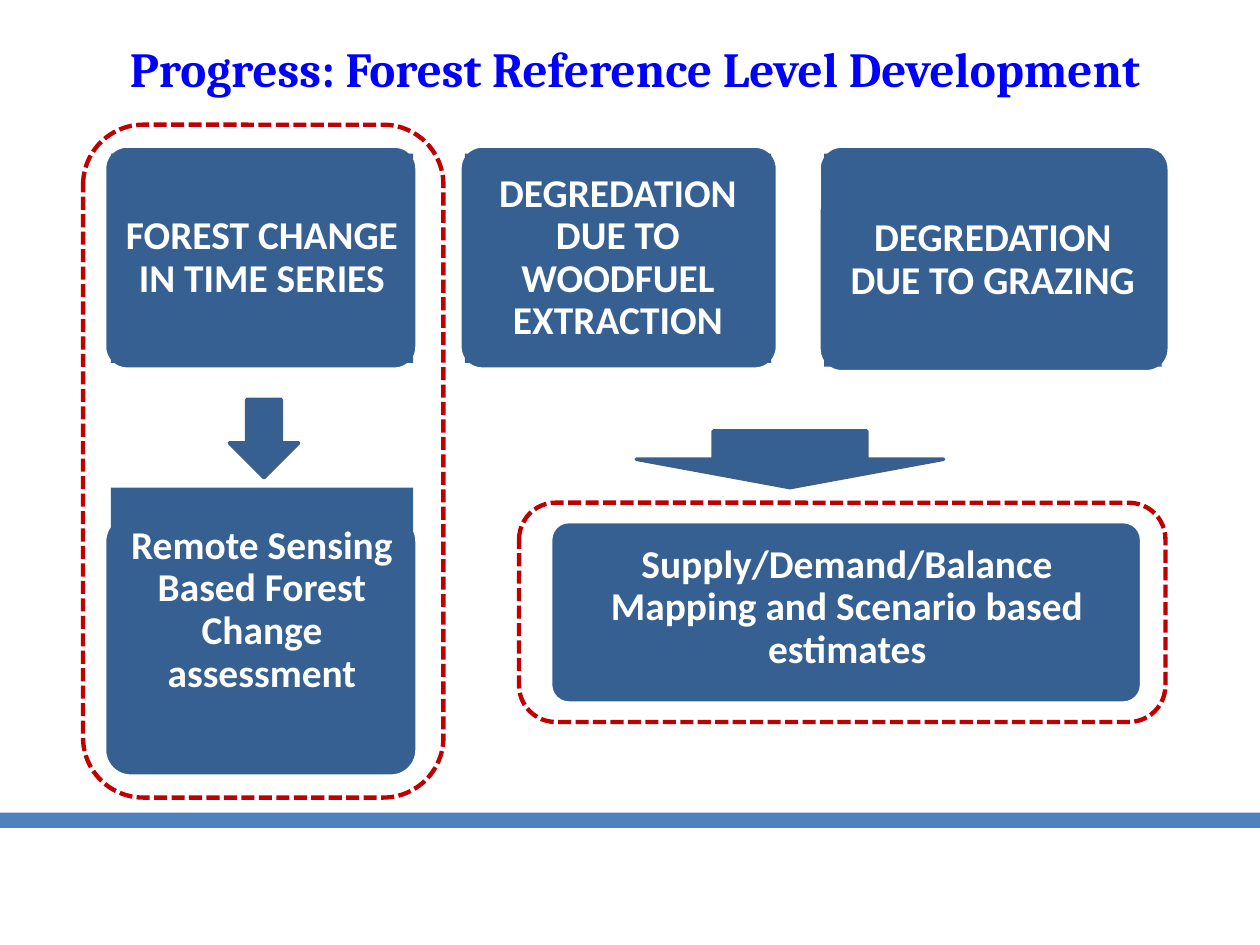
import collections

import pptx
import pptx.dml.color
import pptx.enum.dml
import pptx.enum.shapes
import pptx.enum.text
import pptx.util

Inches = pptx.util.Inches
Pt = pptx.util.Pt
RGBColor = pptx.dml.color.RGBColor
Shapes = pptx.enum.shapes.MSO_SHAPE

NAVY = RGBColor(0x37, 0x60, 0x92)
ARROW_EDGE = RGBColor(0x3A, 0x5F, 0x8C)
BAR_BLUE = RGBColor(0x4F, 0x81, 0xBD)
TITLE_BLUE = RGBColor(0x00, 0x00, 0xFF)
RED = RGBColor(0xC0, 0x00, 0x00)
WHITE = RGBColor(0xFF, 0xFF, 0xFF)

Box = collections.namedtuple("Box", "left top width height")


def inside(box, left, top, width, height):
    return Box(box.left + left, box.top + top, width, height)


def add_shape(parent, kind, box, fill=None, line=None, weight=2):
    shape = parent.add_shape(kind, *(Inches(length) for length in box))
    shape.shadow.inherit = False
    if fill is None:
        shape.fill.background()
    else:
        shape.fill.solid()
        shape.fill.fore_color.rgb = fill
    if line is None:
        shape.line.fill.background()
    else:
        shape.line.color.rgb = line
        shape.line.width = Pt(weight)
    return shape


def format_text(frame, text, font_name, size, color):
    frame.word_wrap = True
    frame.vertical_anchor = pptx.enum.text.MSO_ANCHOR.MIDDLE
    frame.text = text
    para = frame.paragraphs[0]
    para.alignment = pptx.enum.text.PP_ALIGN.CENTER
    for span in para.runs:
        span.font.name = font_name
        span.font.size = Pt(size)
        span.font.bold = True
        span.font.color.rgb = color
    return para


def add_card(page, box, label_box, text):
    card = page.shapes.add_group_shape().shapes
    panel = add_shape(card, Shapes.ROUNDED_RECTANGLE, box, NAVY, WHITE)
    panel.adjustments[0] = 0.1
    label = add_shape(card, Shapes.RECTANGLE, label_box, NAVY)
    frame = label.text_frame
    frame.margin_left = frame.margin_right = Inches(0.09)
    frame.margin_top = frame.margin_bottom = Inches(0.09)
    para = format_text(frame, text, "Calibri", 22.5, WHITE)
    para.line_spacing = 0.9


def add_arrow(page, box):
    add_shape(page.shapes, Shapes.DOWN_ARROW, box, NAVY, ARROW_EDGE)


def add_dashed_outline(page, box):
    outline = add_shape(page.shapes, Shapes.ROUNDED_RECTANGLE, box, line=RED, weight=2.5)
    outline.line.dash_style = pptx.enum.dml.MSO_LINE.SQUARE_DOT


def add_title(page, box):
    title = page.shapes.title
    title.left, title.top, title.width, title.height = (Inches(length) for length in box)
    format_text(title.text_frame, "Progress: Forest Reference Level Development",
                "Cambria", 28, TITLE_BLUE)


def add_forest_change(page, box):
    add_card(page, inside(box, 0.17, 0.17, 2.48, 1.77),
             inside(box, 0.22, 0.23, 2.4, 1.66), "FOREST CHANGE IN TIME SERIES")
    add_arrow(page, inside(box, 1.16, 2.18, 0.55, 0.62))
    add_card(page, inside(box, 0.17, 3.1, 2.48, 2.07),
             inside(box, 0.22, 2.88, 2.4, 1.95),
             "Remote Sensing Based Forest Change assessment")
    add_dashed_outline(page, box)


def add_degradation_causes(page, box):
    add_card(page, inside(box, 0, 0, 2.52, 1.77),
             inside(box, 0.04, 0.06, 2.43, 1.66),
             "DEGREDATION DUE TO WOODFUEL EXTRACTION")
    add_card(page, inside(box, 2.85, 0, 2.78, 1.79),
             inside(box, 2.89, 0.06, 2.68, 1.69), "DEGREDATION DUE TO GRAZING")
    add_arrow(page, inside(box, 1.4, 2.26, 2.44, 0.45))


def add_balance_mapping(page, box):
    add_card(page, inside(box, 0.25, 0.15, 4.69, 1.44),
             inside(box, 0.34, 0.19, 4.53, 1.29),
             "Supply/Demand/Balance Mapping and Scenario based estimates")
    add_dashed_outline(page, box)


def main():
    deck = pptx.Presentation()
    deck.slide_width, deck.slide_height = Inches(10), Inches(7.5)
    page = deck.slides.add_slide(deck.slide_layouts[5])
    add_shape(page.shapes, Shapes.RECTANGLE, Box(0, 6.45, 10, 0.12), BAR_BLUE)
    add_title(page, Box(0.29, 0.08, 9.5, 0.92))
    add_forest_change(page, Box(0.66, 0.99, 2.86, 5.34))
    add_degradation_causes(page, Box(3.65, 1.16, 5.63, 2.71))
    add_balance_mapping(page, Box(4.12, 3.99, 5.13, 1.74))
    deck.save("out.pptx")


if __name__ == "__main__":
    main()
